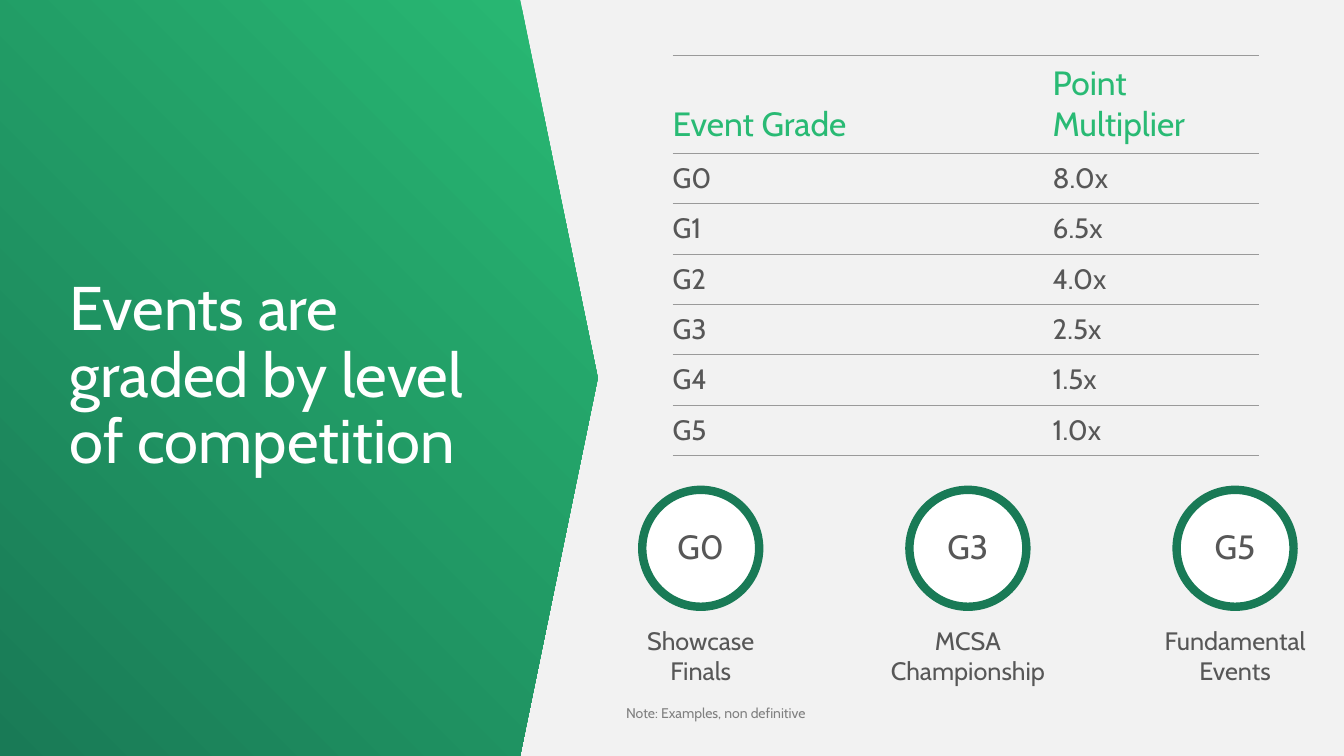
from lxml import etree
from pptx import Presentation
from pptx import util as u
from pptx.dml.color import RGBColor
from pptx.enum import shapes, text
from pptx.oxml import ns

GREEN, DARK_GREEN, GREY, WHITE = "29BA74", "197A56", "575757", "FFFFFF"
RULE, NOTE, PAPER = "9A9A9A", "808080", "F2F2F2"


def rgb(value):
    return RGBColor.from_string(value)


class Deck:
    """Holds the font and the current slide, and adds each kind of element."""

    def __init__(self, s, font="Cabin"):
        self.s = s
        self.font = font

    def style(self, p, size, color, align=None, spacing=None):
        p.font.name = self.font
        p.font.size = u.Pt(size)
        p.font.color.rgb = rgb(color)
        p.alignment = align
        p.line_spacing = spacing

    def set_text(self, sp, words, size, color, anchor, align=None, spacing=None, wrap=True):
        tf = sp.text_frame
        tf.margin_left = tf.margin_right = tf.margin_top = tf.margin_bottom = 0
        tf.word_wrap = wrap
        tf.vertical_anchor = anchor
        tf.text = words
        self.style(tf.paragraphs[0], size, color, align, spacing)

    def label(self, box, *args, **kwargs):
        sp = self.s.shapes.add_textbox(*map(u.Inches, box))
        self.set_text(sp, *args, **kwargs)

    def panel(self, box, point):
        sp = self.s.shapes.add_shape(shapes.MSO_SHAPE.PENTAGON, *map(u.Inches, box))
        sp.adjustments[0] = point
        sp.shadow.inherit = False
        sp.line.fill.background()
        sp.fill.gradient()
        sp.fill.gradient_angle = 225
        for stop, color, position in zip(sp.fill.gradient_stops, (GREEN, DARK_GREEN), (0, 1)):
            stop.color.rgb = rgb(color)
            stop.position = position

    def badge(self, box, words):
        sp = self.s.shapes.add_shape(shapes.MSO_SHAPE.OVAL, *map(u.Inches, box))
        sp.shadow.inherit = False
        sp.fill.solid()
        sp.fill.fore_color.rgb = rgb(WHITE)
        sp.line.color.rgb = rgb(DARK_GREEN)
        sp.line.width = u.Pt(6)
        self.set_text(sp, words, 24, GREY, text.MSO_ANCHOR.MIDDLE,
                      text.PP_ALIGN.CENTER, 0.9, wrap=False)

    def borders(self, cell):
        tc_pr = cell._tc.get_or_add_tcPr()
        for i, side in enumerate(("lnL", "lnR", "lnT", "lnB")):
            ln = etree.Element(ns.qn(f"a:{side}"), w=str(u.Pt(0.75)))
            if side in ("lnT", "lnB"):
                fill = etree.SubElement(ln, ns.qn("a:solidFill"))
                etree.SubElement(fill, ns.qn("a:srgbClr"), val=RULE)
            else:
                etree.SubElement(ln, ns.qn("a:noFill"))
            tc_pr.insert(i, ln)

    def table(self, left, top, widths, heights, rows):
        box = map(u.Inches, (left, top, sum(widths), sum(heights)))
        table = self.s.shapes.add_table(len(rows), len(widths), *box).table
        table.first_row = table.horz_banding = False
        for column, width in zip(table.columns, widths):
            column.width = u.Inches(width)
        for i, (row, height, values) in enumerate(zip(table.rows, heights, rows)):
            row.height = u.Inches(height)
            for cell, value in zip(row.cells, values):
                cell.text = value
                cell.margin_left = 0
                cell.margin_right = cell.margin_top = cell.margin_bottom = u.Inches(0.08)
                cell.vertical_anchor = text.MSO_ANCHOR.TOP if i else text.MSO_ANCHOR.BOTTOM
                cell.fill.background()
                self.borders(cell)
                size, color = (20, GREY) if i else (24, GREEN)
                self.style(cell.text_frame.paragraphs[0], size, color)


def main():
    prs = Presentation()
    prs.slide_width, prs.slide_height = u.Inches(13.33), u.Inches(7.5)
    s = prs.slides.add_slide(prs.slide_layouts[6])
    s.background.fill.solid()
    s.background.fill.fore_color.rgb = rgb(PAPER)
    deck = Deck(s)

    deck.panel((0, 0, 5.93, 7.5), 0.13)
    deck.label((0.69, 1.95, 4.44, 3.59), "Events are graded by level of competition",
               44, WHITE, text.MSO_ANCHOR.MIDDLE, spacing=0.9)

    multipliers = ("8.0x", "6.5x", "4.0x", "2.5x", "1.5x", "1.0x")
    rows = [("Event Grade", "Point Multiplier")]
    rows += [(f"G{grade}", value) for grade, value in enumerate(multipliers)]
    deck.table(6.67, 0.55, (3.77, 2.05), [0.97] + [0.5] * len(multipliers), rows)

    examples = (("G0", "Showcase Finals"), ("G3", "MCSA Championship"),
                ("G5", "Fundamental Events"))
    for i, (grade, event) in enumerate(examples):
        center = 6.95 + i * 2.65
        deck.label((center - 0.84, 6.2, 1.68, 0.68), event, 18, GREY,
                   text.MSO_ANCHOR.TOP, text.PP_ALIGN.CENTER)
        deck.badge((center - 0.58, 4.86, 1.16, 1.16), grade)

    deck.label((6.21, 7.01, 4.93, 0.15), "Note: Examples, non definitive",
               10, NOTE, text.MSO_ANCHOR.BOTTOM, spacing=0.9)
    prs.save("out.pptx")


if __name__ == "__main__":
    main()
